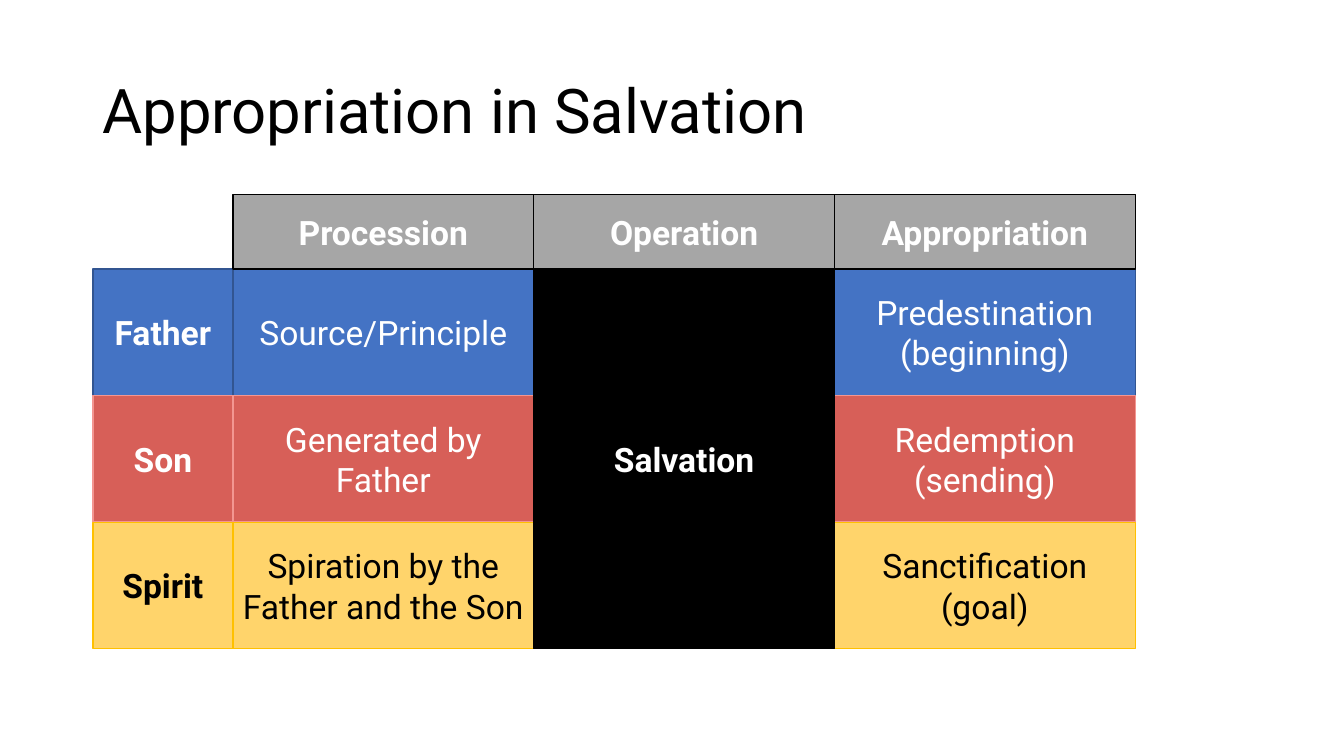
import pptx
import pptx.util
import pptx.dml.color
import pptx.enum.shapes
import pptx.enum.text

Cm = pptx.util.Cm
Pt = pptx.util.Pt
LABEL, COL, HEAD, ROW = 3.53, 7.58, 1.88, 3.19
ROWS = [
    ("Father", "Source/Principle", "Predestination\n(beginning)",
     dict(fill="4473C4", line="325591")),
    ("Son", "Generated by Father", "Redemption\n(sending)",
     dict(fill="D75F58", line="F39691")),
    ("Spirit", "Spiration by the\nFather and the Son", "Sanctification\v(goal)",
     dict(fill="FFD46B", line="FFC000", color="000000")),
]


def rgb(code):
    """Turn a hex string into a colour."""
    return pptx.dml.color.RGBColor.from_string(code)


def write(shape, text, size=24, color="FFFFFF", bold=False, align="CENTER", space=1.0):
    """Put formatted text into a shape."""
    frame = shape.text_frame
    frame.word_wrap = True
    frame.vertical_anchor = pptx.enum.text.MSO_ANCHOR.MIDDLE
    frame.text = text
    for para in frame.paragraphs:
        para.alignment = getattr(pptx.enum.text.PP_ALIGN, align)
        para.line_spacing = space
        for run in para.runs:
            run.font.name = "Roboto"
            run.font.size = Pt(size)
            run.font.bold = bold
            run.font.color.rgb = rgb(color)


def tile(slide, box, text, fill, line, **style):
    """Draw one filled cell with its text."""
    shape = slide.shapes.add_shape(
        pptx.enum.shapes.MSO_SHAPE.RECTANGLE, *map(Cm, box))
    shape.shadow.inherit = False
    shape.fill.solid()
    shape.fill.fore_color.rgb = rgb(fill)
    shape.line.color.rgb = rgb(line)
    shape.line.width = Pt(1)
    shape.text_frame.margin_left = shape.text_frame.margin_right = Cm(0.2)
    write(shape, text, **style)


def title(slide, box, text):
    """Draw the heading of the slide."""
    shape = slide.shapes.add_textbox(*map(Cm, box))
    write(shape, text, size=44, color="000000", align="LEFT", space=0.9)


def grid(slide, left, top):
    """Draw the rows, the shared middle cell and the column heads."""
    cols = [left + LABEL + i * COL for i in range(3)]
    body = top + HEAD
    for i, (name, source, work, style) in enumerate(ROWS):
        y = body + i * ROW
        tile(slide, (left, y, LABEL, ROW), name, bold=True, **style)
        tile(slide, (cols[0], y, COL, ROW), source, **style)
        tile(slide, (cols[2], y, COL, ROW), work, **style)
    tile(slide, (cols[1], body, COL, ROW * len(ROWS)), "Salvation",
         "000000", "000000", bold=True)
    for x, head in zip(cols, ("Procession", "Operation", "Appropriation")):
        tile(slide, (x, top, COL, HEAD), head, "A6A6A6", "000000", bold=True)


def main():
    """Build and save the slide."""
    deck = pptx.Presentation()
    deck.slide_width, deck.slide_height = Cm(33.87), Cm(19.05)
    slide = deck.slides.add_slide(deck.slide_layouts[6])
    title(slide, (2.33, 1.01, 29.21, 3.68), "Appropriation in Salvation")
    grid(slide, 2.34, 4.9)
    deck.save("out.pptx")


if __name__ == "__main__":
    main()
